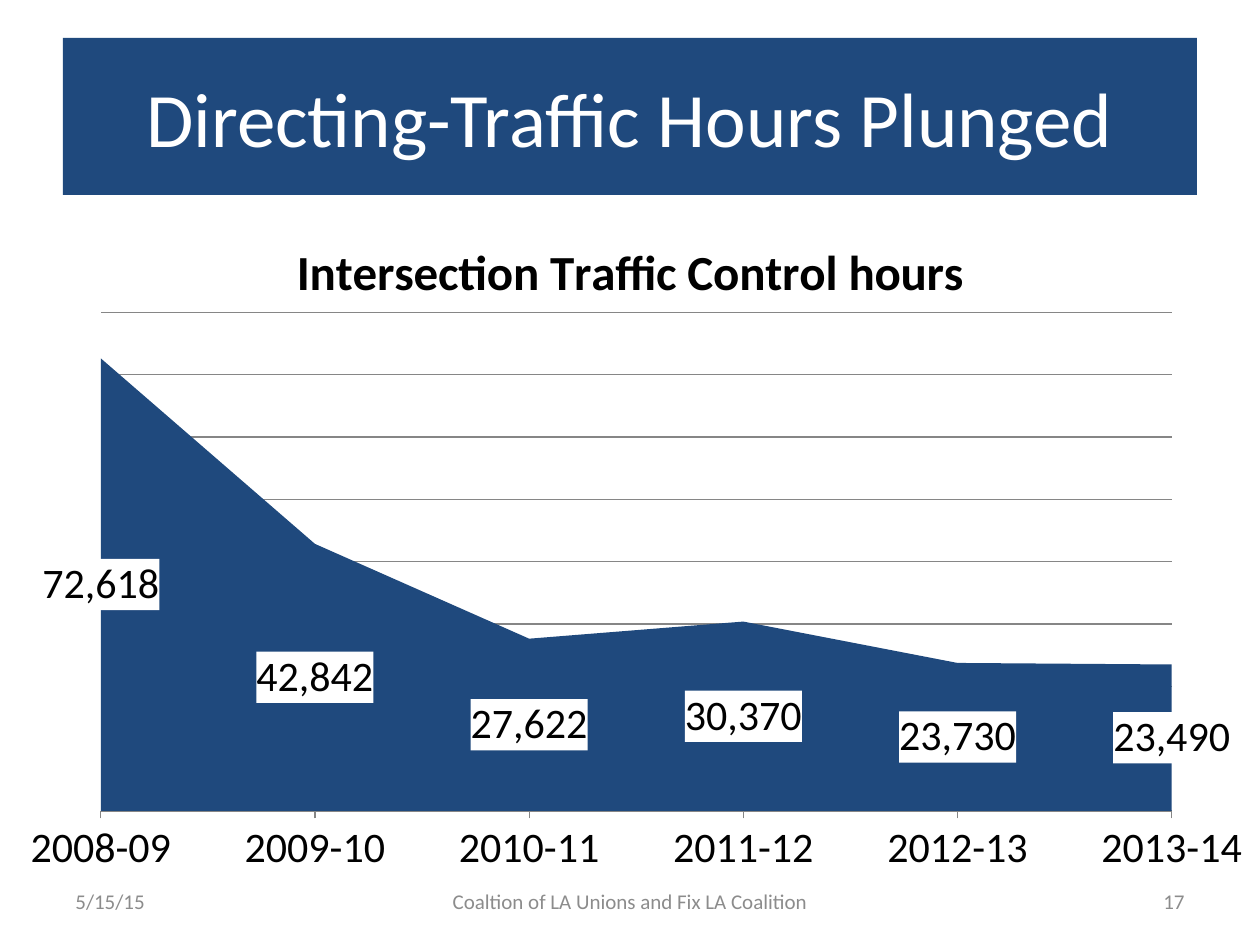
from lxml import etree
from pptx import Presentation
from pptx.chart.data import CategoryChartData
from pptx.dml.color import RGBColor
from pptx.enum.chart import XL_CHART_TYPE, XL_TICK_LABEL_POSITION, XL_TICK_MARK
from pptx.enum.shapes import MSO_SHAPE
from pptx.enum.text import MSO_ANCHOR, PP_ALIGN
from pptx.oxml import parse_xml
from pptx.oxml.ns import nsdecls, qn
from pptx.util import Emu, Pt

PX = 914400 // 126
NAVY, GRAY, BLACK, WHITE = "1F497D", "8C8C8C", "000000", "FFFFFF"
FONT = "Calibri"
HOURS = {
    "2008-09": 72618, "2009-10": 42842, "2010-11": 27622,
    "2011-12": 30370, "2012-13": 23730, "2013-14": 23490,
}


def px(length):
    return Emu(length * PX)


def color(hex_code):
    return RGBColor.from_string(hex_code)


def style_font(font, size, hex_code=BLACK, bold=False):
    font.name, font.size, font.bold = FONT, Pt(size), bold
    font.color.rgb = color(hex_code)


def write(frame, text, size=12, hex_code=GRAY, align=PP_ALIGN.LEFT):
    frame.word_wrap = True
    frame.vertical_anchor = MSO_ANCHOR.MIDDLE
    para = frame.paragraphs[0]
    para.alignment = align
    span = para.add_run()
    span.text = text
    style_font(span.font, size, hex_code)


def add_title(page, left, top, width, height):
    banner = page.shapes.add_shape(
        MSO_SHAPE.RECTANGLE, px(left), px(top), px(width), px(height))
    banner.shadow.inherit = False
    banner.fill.solid()
    banner.fill.fore_color.rgb = color(NAVY)
    banner.line.fill.background()
    write(banner.text_frame, "Directing-Traffic Hours Plunged", size=44,
          hex_code=WHITE, align=PP_ALIGN.CENTER)


def add_footer(page, left, top, width, height):
    side, middle = 294, 400
    parts = [
        ("5/15/15", 0, side, PP_ALIGN.LEFT),
        ("Coaltion of LA Unions and Fix LA Coalition",
         (width - middle) // 2, middle, PP_ALIGN.CENTER),
        ("17", width - side, side, PP_ALIGN.RIGHT),
    ]
    for text, offset, part_width, align in parts:
        box = page.shapes.add_textbox(
            px(left + offset), px(top), px(part_width), px(height))
        write(box.text_frame, text, align=align)


def set_layout(parent, before, **values):
    """Place a chart part by fractions of the chart's size."""
    for old in parent.findall(qn("c:layout")):
        parent.remove(old)
    layout = parse_xml(f"<c:layout {nsdecls('c')}><c:manualLayout/></c:layout>")
    for name, value in values.items():
        etree.SubElement(layout[0], qn(f"c:{name}")).set("val", str(value))
    parent.find(qn(before)).addprevious(layout)


def style_axes(chart):
    hours = chart.value_axis
    hours.minimum_scale, hours.maximum_scale, hours.major_unit = 0, 80000, 10000
    hours.visible = False
    hours.has_major_gridlines = True
    years = chart.category_axis
    years.major_tick_mark = XL_TICK_MARK.OUTSIDE
    years.tick_label_position = XL_TICK_LABEL_POSITION.LOW
    style_font(years.tick_labels.font, 24)
    for line in (hours.major_gridlines.format.line, years.format.line):
        line.color.rgb = color("868686")
        line.width = Pt(0.75)


def style_labels(plot):
    plot.has_data_labels = True
    labels = plot.data_labels
    labels.show_value = True
    labels.number_format = "#,##0"
    labels.number_format_is_linked = False
    style_font(labels.font, 24)
    backdrop = parse_xml(
        f'<c:spPr {nsdecls("c", "a")}><a:solidFill><a:srgbClr val="{WHITE}"/>'
        "</a:solidFill></c:spPr>")
    plot.series[0].format.fill.solid()
    plot.series[0].format.fill.fore_color.rgb = color(NAVY)
    labels.font  # the text properties follow the backdrop
    chart_labels = next(plot.series[0].format.fill and item for item in
                        [plot._element.find(qn("c:dLbls"))])
    chart_labels.find(qn("c:numFmt")).addnext(backdrop)


def add_hours_chart(page, left, top, width, height):
    data = CategoryChartData(number_format="#,##0")
    data.categories = list(HOURS)
    data.add_series("Series 1", list(HOURS.values()))
    chart = page.shapes.add_chart(
        XL_CHART_TYPE.AREA, px(left), px(top), px(width), px(height), data).chart
    chart.has_legend = False
    style_font(chart.font, 10)
    chart.has_title = True
    title = chart.chart_title
    title.include_in_layout = False
    title.text_frame.text = "Intersection Traffic Control hours"
    style_font(title.text_frame.paragraphs[0].runs[0].font, 28, bold=True)
    style_axes(chart)
    style_labels(chart.plots[0])

    # Areas run from the first year's tick to the last
    root = chart.element
    root.find(f".//{qn('c:crossBetween')}").set("val", "midCat")
    set_layout(root.find(f".//{qn('c:plotArea')}"), "c:areaChart",
               layoutTarget="inner", xMode="edge", yMode="edge",
               x=0.08, y=0.15, w=0.85, h=0.73)


def main():
    deck = Presentation()
    deck.slide_width, deck.slide_height = px(1260), px(945)
    page = deck.slides.add_slide(deck.slide_layouts[6])
    add_title(page, 63, 38, 1134, 157)
    add_footer(page, 63, 876, 1134, 50)
    add_hours_chart(page, 0, 210, 1260, 683)
    deck.save("out.pptx")


if __name__ == "__main__":
    main()
